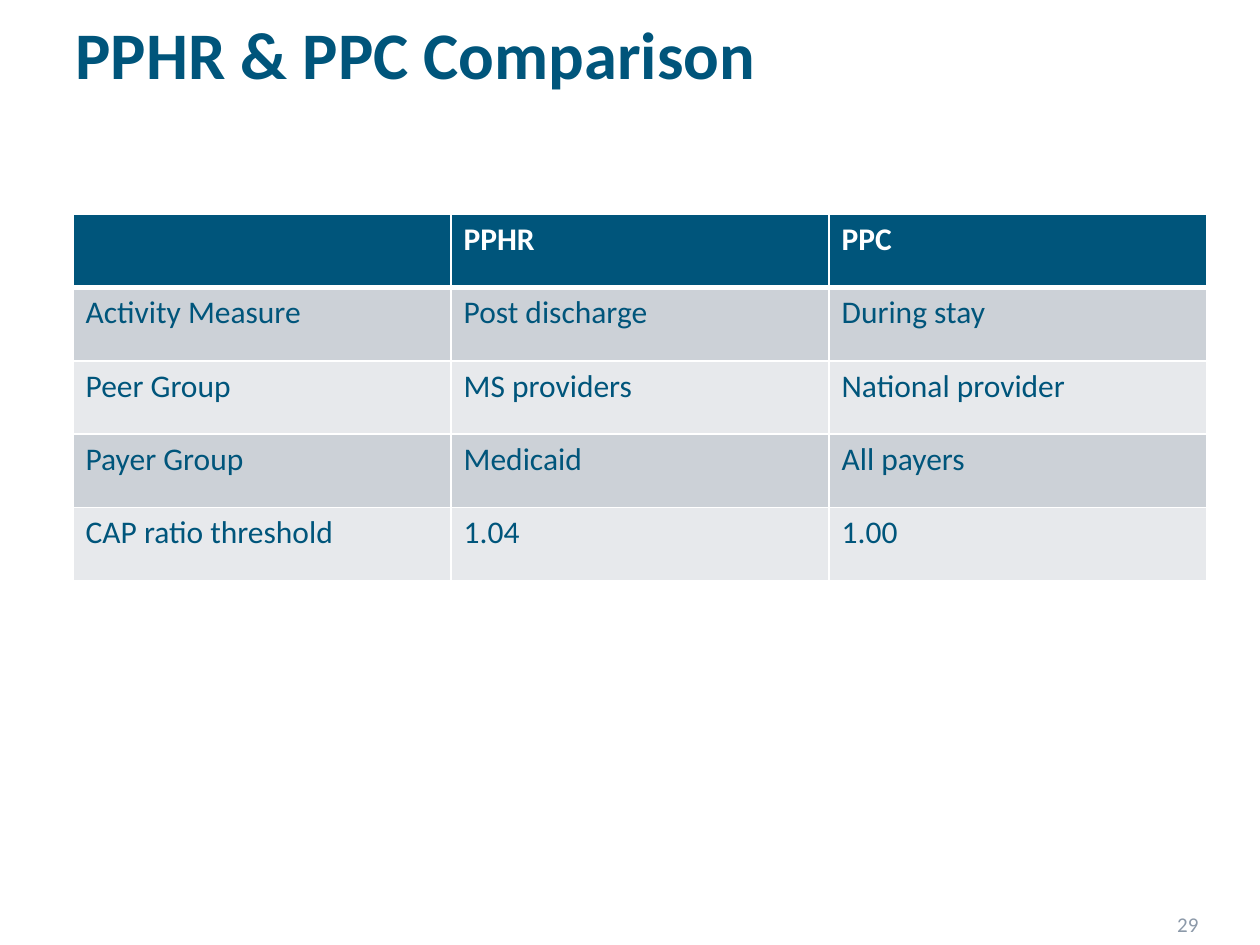
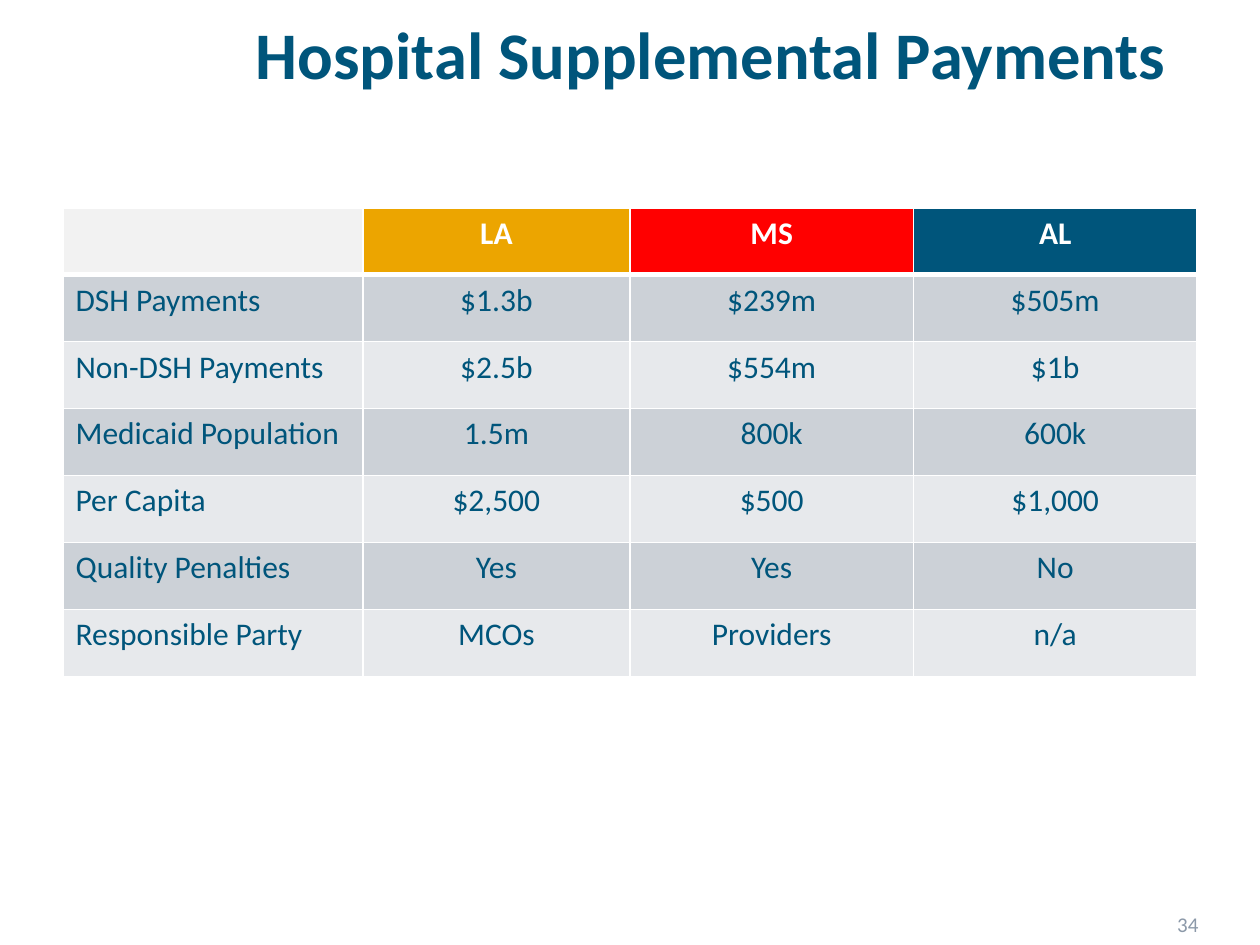
from lxml import etree
from pptx import Presentation
from pptx.dml.color import RGBColor
from pptx.enum.text import MSO_ANCHOR as Anchor, MSO_AUTO_SIZE as AutoSize, PP_ALIGN as Align
from pptx.oxml.ns import qn
from pptx.util import Inches, Pt

FONT = "Calibri"
NAVY, GOLD, RED = "00557B", "ECA500", "FF0000"
WHITE, PALE, GREY = "FFFFFF", "F2F2F2", "8C99A9"
BANDS = ("CCD1D7", "E7E9EC")
TITLE_BOX = (0.5, 0, 9, 0.79)
NUMBER_BOX = (7.04, 7.17, 2.57, 0.33)

COMPARISON = [
    ["", "PPHR", "PPC"],
    ["Activity Measure", "Post discharge", "During stay"],
    ["Peer Group", "MS providers", "National provider"],
    ["Payer Group", "Medicaid", "All payers"],
    ["CAP ratio threshold", "1.04", "1.00"],
]
PAYMENTS = [
    ["", "LA", "MS", "AL"],
    ["DSH Payments", "$1.3b", "$239m", "$505m"],
    ["Non-DSH Payments", "$2.5b", "$554m", "$1b"],
    ["Medicaid Population", "1.5m", "800k", "600k"],
    ["Per Capita", "$2,500", "$500", "$1,000"],
    ["Quality Penalties", "Yes", "Yes", "No"],
    ["Responsible Party", "MCOs", "Providers", "n/a"],
]


def rgb(code):
    return RGBColor.from_string(code)


def write(frame, text, size=18, color=NAVY, bold=False, align=Align.LEFT):
    paragraph = frame.paragraphs[0]
    paragraph.alignment = align
    font = paragraph.font
    font.name, font.size, font.bold = FONT, Pt(size), bold
    font.color.rgb = rgb(color)
    if text:
        run = paragraph.add_run()
        run.text = text
        run.font.name, run.font.size, run.font.bold = FONT, Pt(size), bold
        run.font.color.rgb = rgb(color)


def add_title(slide, text, indent):
    title = slide.shapes.title
    title.left, title.top, title.width, title.height = map(Inches, TITLE_BOX)
    frame = title.text_frame
    frame.auto_size = AutoSize.NONE
    frame.vertical_anchor = Anchor.BOTTOM
    frame.margin_left = Inches(0.1 + indent)
    write(frame, text, size=38, bold=True)


def add_number(slide, number):
    frame = slide.shapes.add_textbox(*map(Inches, NUMBER_BOX)).text_frame
    frame.word_wrap = True
    frame.vertical_anchor = Anchor.MIDDLE
    write(frame, str(number), size=12, color=GREY, align=Align.RIGHT)


def set_borders(cell, top, bottom):
    """Draw white cell edges, with the top and bottom widths in points."""
    properties = cell._tc.get_or_add_tcPr()
    for side, width in (("L", 1), ("R", 1), ("T", top), ("B", bottom)):
        line = etree.SubElement(properties, qn(f"a:ln{side}"), w=str(Pt(width)))
        fill = etree.SubElement(line, qn("a:solidFill"))
        etree.SubElement(fill, qn("a:srgbClr"), val=WHITE)


def add_grid(slide, box, rows, widths, header_fills, value_align):
    table = slide.shapes.add_table(len(rows), len(widths), *map(Inches, box)).table
    table.horz_banding = False
    for column, width in zip(table.columns, widths):
        column.width = Inches(width)
    for r, values in enumerate(rows):
        header = r == 0
        for c, value in enumerate(values):
            cell = table.cell(r, c)
            set_borders(cell, top=3 if r == 1 else 1, bottom=3 if header else 1)
            cell.fill.solid()
            cell.fill.fore_color.rgb = rgb(header_fills[c] if header else BANDS[(r - 1) % 2])
            write(cell.text_frame, value, color=WHITE if header else NAVY, bold=header,
                  align=value_align if c else Align.LEFT)


def add_table_slide(deck, title, number, box, rows, widths, header_fills,
                    value_align=Align.LEFT, title_indent=0):
    slide = deck.slides.add_slide(deck.slide_layouts.get_by_name("Title Only"))
    add_number(slide, number)
    add_grid(slide, box, rows, widths, header_fills, value_align)
    add_title(slide, title, title_indent)


def main():
    deck = Presentation()
    deck.slide_width, deck.slide_height = Inches(10), Inches(7.5)
    add_table_slide(deck, "PPHR & PPC Comparison", 29, (0.58, 1.7, 9, 2.91),
                    COMPARISON, [3] * 3, [NAVY] * 3)
    add_table_slide(deck, "Hospital Supplemental Payments", 34, (0.5, 1.65, 9, 3.72),
                    PAYMENTS, [2.38, 2.12, 2.25, 2.25], [PALE, GOLD, RED, NAVY],
                    value_align=Align.CENTER, title_indent=1.43)
    deck.save("out.pptx")


if __name__ == "__main__":
    main()
